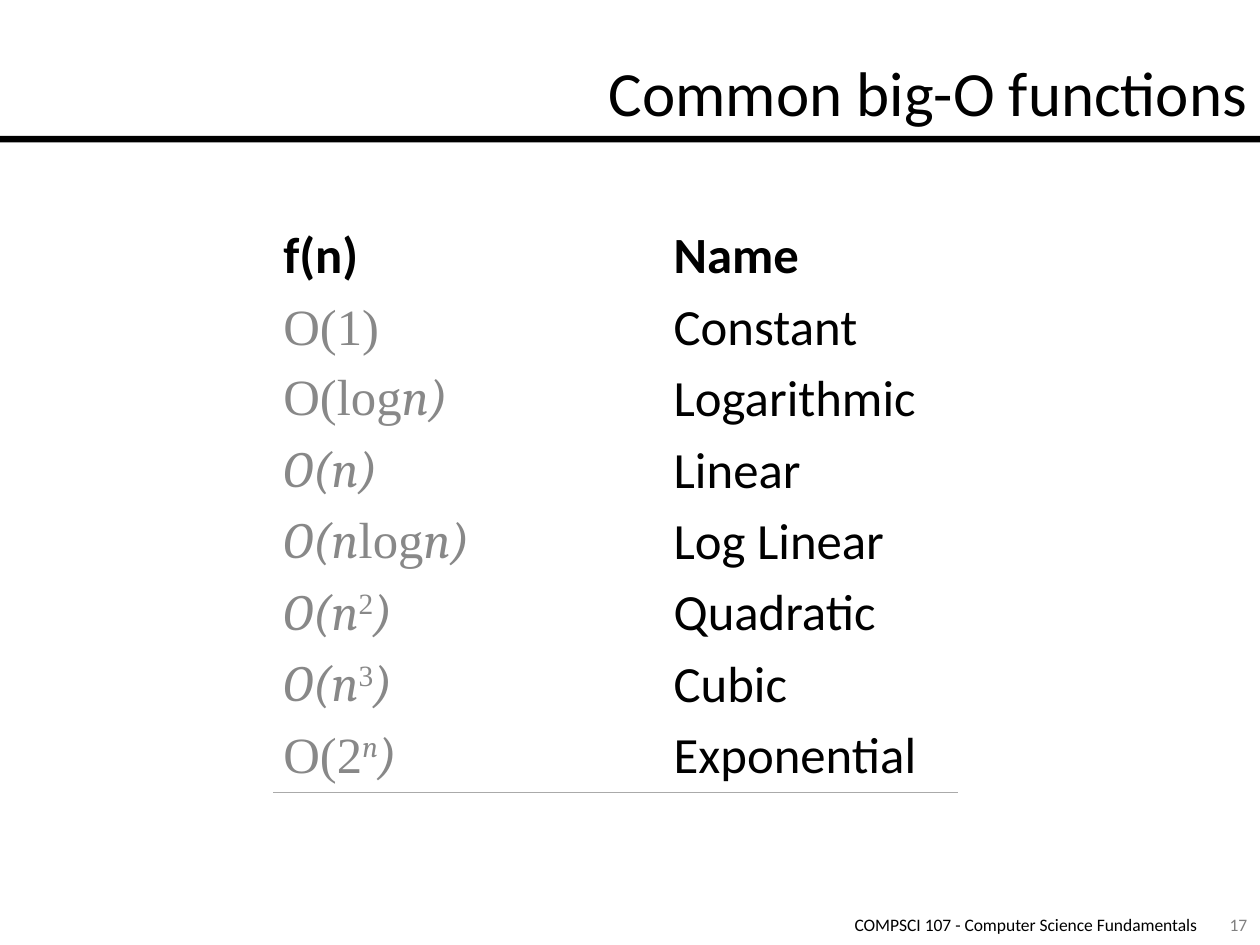
from lxml import etree
from pptx import Presentation
from pptx.dml.color import RGBColor
from pptx.enum import shapes, text
from pptx.oxml.ns import qn
from pptx.util import Cm, Pt

TITLE = "Common big-O functions"
FOOTER = "COMPSCI 107 - Computer Science Fundamentals"
PAGE = "17"
COLORS = {"ink": "000000", "paper": "FFFFFF", "formula": "888888",
          "border": "AAAAAA", "page": "808080"}
STYLES = {
    "head": dict(font="Calibri", color="ink", bold=True),
    "name": dict(font="Calibri", color="ink"),
    "roman": dict(font="Times New Roman", color="formula"),
    "math": dict(font="Cambria", color="formula", italic=True),
    "roman_sup": dict(font="Times New Roman", color="formula", raised=True),
    "math_sup": dict(font="Cambria", color="formula", italic=True, raised=True),
}
HEADINGS = ["f(n)", "Name"]
FUNCTIONS = [
    ([("O(1)", "roman")], "Constant"),
    ([("O(log", "roman"), ("n)", "math")], "Logarithmic"),
    ([("O(n)", "math")], "Linear"),
    ([("O(n", "math"), ("log", "roman"), ("n)", "math")], "Log Linear"),
    ([("O(n", "math"), ("2", "roman_sup"), (")", "math")], "Quadratic"),
    ([("O(n", "math"), ("3", "roman_sup"), (")", "math")], "Cubic"),
    ([("O(2", "roman"), ("n", "math_sup"), (")", "math")], "Exponential"),
]
COL_WIDTHS = [7.87, 5.94]
ROW_HEIGHT = 1.44


def rgb(name):
    return RGBColor.from_string(COLORS[name])


def format_run(r, size, font, color, bold=False, italic=False, raised=False):
    r.font.size, r.font.name = Pt(size), font
    r.font.bold, r.font.italic = bold, italic
    r.font.color.rgb = rgb(color)
    if raised:
        r._r.get_or_add_rPr().set("baseline", "30000")


def set_line(tf, words, size, color, align, anchor):
    tf.text = words
    tf.word_wrap = True
    tf.vertical_anchor = anchor
    p = tf.paragraphs[0]
    p.alignment = align
    format_run(p.runs[0], size, "Calibri", color)


def set_borders(cell):
    tc_pr = cell._tc.get_or_add_tcPr()
    edges = []
    for tag in ("a:lnL", "a:lnR", "a:lnT", "a:lnB"):
        ln = etree.Element(qn(tag), w=str(Pt(0.75)))
        if tag == "a:lnB":
            fill = etree.SubElement(ln, qn("a:solidFill"))
            etree.SubElement(fill, qn("a:srgbClr"), val=COLORS["border"])
        else:
            etree.SubElement(ln, qn("a:noFill"))
        edges.append(ln)
    for i, ln in enumerate(edges):
        tc_pr.insert(i, ln)


def fill_cell(cell, parts):
    cell.margin_left, cell.margin_right = Cm(0.2), Cm(0.33)
    cell.margin_top = cell.margin_bottom = Cm(0.05)
    cell.vertical_anchor = text.MSO_ANCHOR.MIDDLE
    cell.fill.solid()
    cell.fill.fore_color.rgb = rgb("paper")
    set_borders(cell)
    p = cell.text_frame.paragraphs[0]
    for words, style in parts:
        r = p.add_run()
        r.text = words
        format_run(r, 29, **STYLES[style])


def add_rule(s):
    sp = s.shapes.add_shape(shapes.MSO_SHAPE.RECTANGLE, 0, Cm(2.74), Cm(25.4), Cm(0.13))
    sp.shadow.inherit = False
    sp.fill.solid()
    sp.fill.fore_color.rgb = rgb("ink")
    sp.line.fill.background()


def add_title(s):
    sp = s.shapes.title
    sp.left, sp.top, sp.width, sp.height = 0, 0, Cm(25.4), Cm(2.74)
    set_line(sp.text_frame, TITLE, 36, "ink", text.PP_ALIGN.RIGHT, text.MSO_ANCHOR.BOTTOM)


def add_function_table(s):
    rows = [[[(h, "head")] for h in HEADINGS]]
    rows += [[formula, [(name, "name")]] for formula, name in FUNCTIONS]
    frame = s.shapes.add_table(len(rows), len(COL_WIDTHS), Cm(5.51), Cm(4.45),
                               Cm(sum(COL_WIDTHS)), Cm(ROW_HEIGHT * len(rows)))
    table = frame.table
    table.horz_banding = False
    for column, width in zip(table.columns, COL_WIDTHS):
        column.width = Cm(width)
    for i, row in enumerate(rows):
        table.rows[i].height = Cm(ROW_HEIGHT)
        for j, parts in enumerate(row):
            fill_cell(table.cell(i, j), parts)


def add_footer(s, words, left, width, color, align):
    tf = s.shapes.add_textbox(Cm(left), Cm(18.42), Cm(width), Cm(0.43)).text_frame
    tf.margin_left = tf.margin_right = tf.margin_top = tf.margin_bottom = 0
    set_line(tf, words, 10, color, align, text.MSO_ANCHOR.MIDDLE)


def main():
    prs = Presentation()
    prs.slide_width, prs.slide_height = Cm(25.4), Cm(19.05)
    s = prs.slides.add_slide(prs.slide_layouts[5])
    add_rule(s)
    add_title(s)
    add_function_table(s)
    add_footer(s, PAGE, 24.33, 1.27, "page", text.PP_ALIGN.CENTER)
    add_footer(s, FOOTER, 12.27, 11.86, "ink", text.PP_ALIGN.RIGHT)
    prs.save("out.pptx")


if __name__ == "__main__":
    main()
